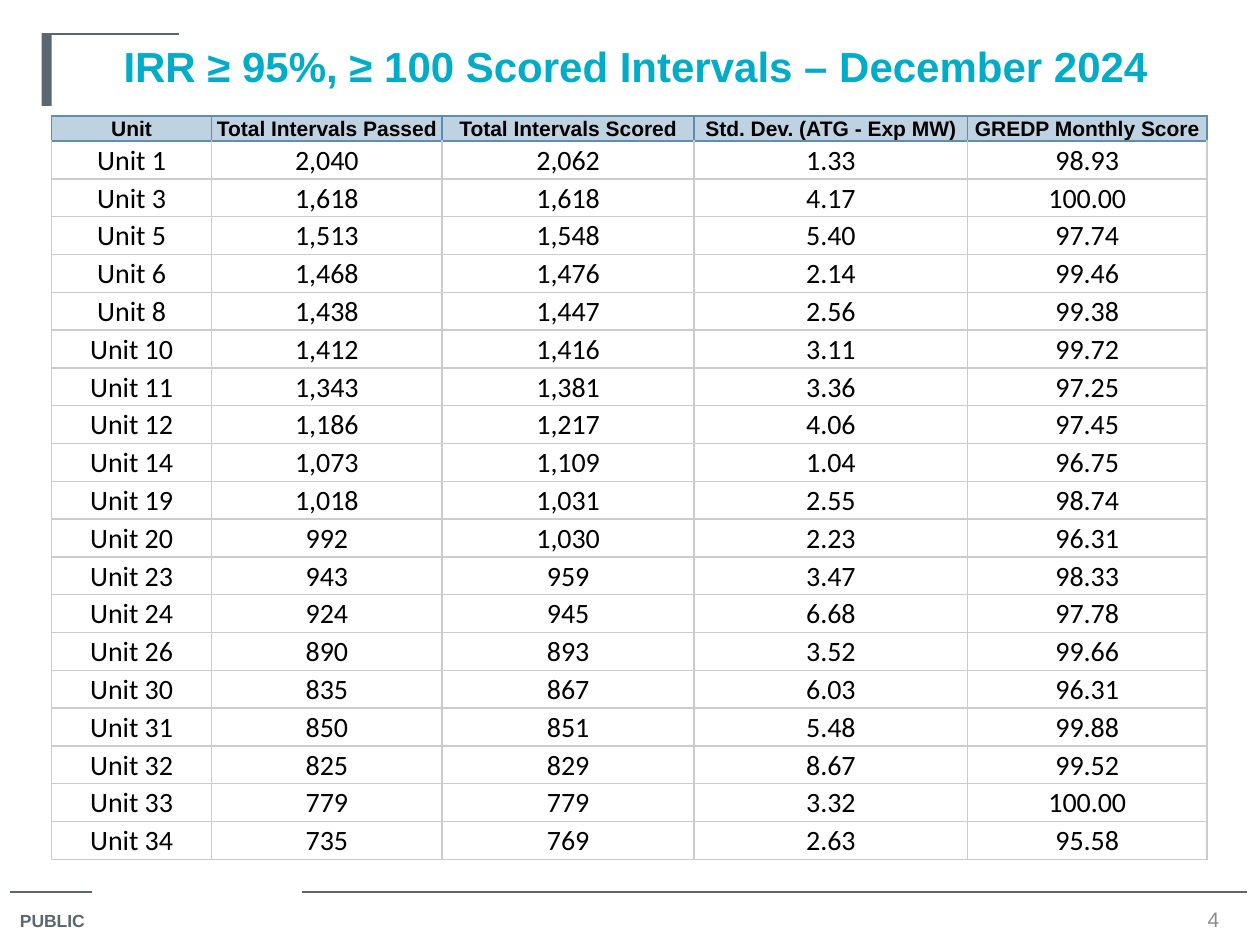
from pptx import Presentation
from pptx.dml.color import RGBColor
from pptx.enum.shapes import MSO_CONNECTOR, MSO_SHAPE
from pptx.enum.text import MSO_ANCHOR, PP_ALIGN
from pptx.oxml.ns import qn
from pptx.util import Inches, Pt
from lxml import etree

LEFT, CENTER = PP_ALIGN.LEFT, PP_ALIGN.CENTER
TOP, MIDDLE = MSO_ANCHOR.TOP, MSO_ANCHOR.MIDDLE
STRAIGHT, RECTANGLE = MSO_CONNECTOR.STRAIGHT, MSO_SHAPE.RECTANGLE

# Content
TITLE = "IRR ≥ 95%, ≥ 100 Scored Intervals – December 2024"
HEADERS = ("Unit", "Total Intervals Passed", "Total Intervals Scored",
           "Std. Dev. (ATG - Exp MW)", "GREDP Monthly Score")
SCORES = [
    ("Unit 1", "2,040", "2,062", "1.33", "98.93"),
    ("Unit 3", "1,618", "1,618", "4.17", "100.00"),
    ("Unit 5", "1,513", "1,548", "5.40", "97.74"),
    ("Unit 6", "1,468", "1,476", "2.14", "99.46"),
    ("Unit 8", "1,438", "1,447", "2.56", "99.38"),
    ("Unit 10", "1,412", "1,416", "3.11", "99.72"),
    ("Unit 11", "1,343", "1,381", "3.36", "97.25"),
    ("Unit 12", "1,186", "1,217", "4.06", "97.45"),
    ("Unit 14", "1,073", "1,109", "1.04", "96.75"),
    ("Unit 19", "1,018", "1,031", "2.55", "98.74"),
    ("Unit 20", "992", "1,030", "2.23", "96.31"),
    ("Unit 23", "943", "959", "3.47", "98.33"),
    ("Unit 24", "924", "945", "6.68", "97.78"),
    ("Unit 26", "890", "893", "3.52", "99.66"),
    ("Unit 30", "835", "867", "6.03", "96.31"),
    ("Unit 31", "850", "851", "5.48", "99.88"),
    ("Unit 32", "825", "829", "8.67", "99.52"),
    ("Unit 33", "779", "779", "3.32", "100.00"),
    ("Unit 34", "735", "769", "2.63", "95.58"),
]
COLORS = {"slate": "5B6770", "title": "00ACC8", "number": "8C8C8C", "text": "000000",
          "header": "BFD2E2", "header_edge": "608BB4", "grid": "CCCCCC"}

# Layout, in inches
COLUMN_WIDTHS = (1.27, 1.83, 2, 2.17, 1.9)
HEADER_HEIGHT, ROW_HEIGHT = 0.2, 0.3
RULES = [(0.08, 0.73, 7.08), (2.4, 9.9, 7.08), (0.33, 1.42, 0.27)]


def color(name):
    return RGBColor.from_string(COLORS[name])


def style(para, size, color_name, font="Arial", bold=False, align=CENTER):
    para.alignment = align
    para.font.name, para.font.size, para.font.bold = font, Pt(size), bold
    para.font.color.rgb = color(color_name)


def add_rule(page, start, end, y):
    rule = page.shapes.add_connector(STRAIGHT, Inches(start), Inches(y), Inches(end), Inches(y))
    rule.line.color.rgb = color("slate")
    rule.line.width = Pt(0.75)
    etree.SubElement(rule._element.spPr, qn("a:effectLst"))


def add_label(page, text, place, size, color_name, bold, align, anchor):
    box = page.shapes.add_textbox(*map(Inches, place))
    frame = box.text_frame
    frame.word_wrap = True
    frame.vertical_anchor = anchor
    frame.text = text
    style(frame.paragraphs[0], size, color_name, bold=bold, align=align)


def set_borders(cell, edge, top_edge):
    properties = cell._tc.get_or_add_tcPr()
    for side, name in (("L", edge), ("R", edge), ("T", top_edge), ("B", edge)):
        border = etree.SubElement(properties, qn(f"a:ln{side}"), w=str(Pt(1)))
        fill = etree.SubElement(border, qn("a:solidFill"))
        etree.SubElement(fill, qn("a:srgbClr"), val=COLORS[name])


def add_score_table(page):
    rows = [HEADERS] + SCORES
    height = HEADER_HEIGHT + ROW_HEIGHT * len(SCORES)
    frame = page.shapes.add_table(len(rows), len(HEADERS), Inches(0.41), Inches(0.92),
                                  Inches(sum(COLUMN_WIDTHS)), Inches(height))
    table = frame.table
    table.horz_banding = False
    for column, width in zip(table.columns, COLUMN_WIDTHS):
        column.width = Inches(width)
    for r, values in enumerate(rows):
        is_header = r == 0
        table.rows[r].height = Inches(HEADER_HEIGHT if is_header else ROW_HEIGHT)
        for c, value in enumerate(values):
            cell = table.cell(r, c)
            cell.text = value
            cell.vertical_anchor = MIDDLE
            cell.margin_left = cell.margin_right = cell.margin_top = Inches(0.01)
            cell.margin_bottom = 0
            set_borders(cell, "header_edge" if is_header else "grid",
                        "header_edge" if r < 2 else "grid")
            para = cell.text_frame.paragraphs[0]
            if is_header:
                cell.fill.solid()
                cell.fill.fore_color.rgb = color("header")
                style(para, 12, "text", bold=True)
            else:
                cell.fill.background()
                style(para, 16, "text", font="Calibri")


def main():
    deck = Presentation()
    deck.slide_width, deck.slide_height = Inches(10), Inches(7.5)
    page = deck.slides.add_slide(deck.slide_layouts[5])

    # Rules and title accent
    for rule in RULES:
        add_rule(page, *rule)
    accent = page.shapes.add_shape(RECTANGLE, *map(Inches, (0.33, 0.27, 0.08, 0.57)))
    accent.shadow.inherit = False
    accent.fill.solid()
    accent.fill.fore_color.rgb = color("slate")
    accent.line.fill.background()

    # Title
    title = page.shapes.title
    title.left, title.top, title.width, title.height = map(Inches, (0.42, 0.27, 9.25, 0.78))
    title.text_frame.text = TITLE
    title.text_frame.vertical_anchor = TOP
    style(title.text_frame.paragraphs[0], 24, "title", bold=True)

    add_score_table(page)

    # Footer
    add_label(page, "PUBLIC", (0.06, 7.17, 0.77, 0.28), 10, "slate", True, LEFT, TOP)
    add_label(page, "4", (9.42, 7.18, 0.42, 0.23), 12, "number", False, CENTER, MIDDLE)

    deck.save("out.pptx")


if __name__ == "__main__":
    main()
